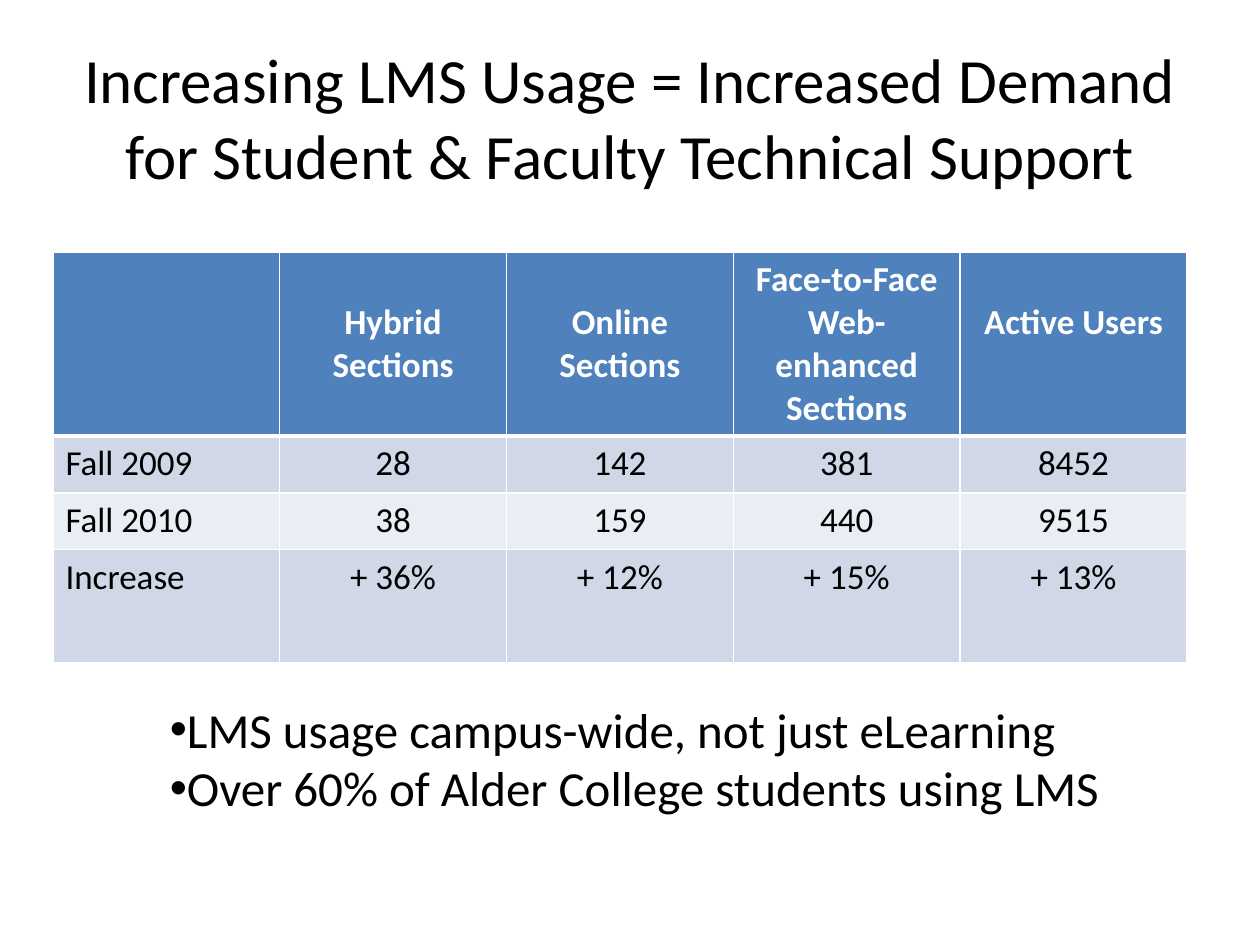
from lxml.etree import SubElement
from pptx import Presentation
from pptx.dml.color import RGBColor
from pptx.enum.text import MSO_ANCHOR, MSO_AUTO_SIZE, PP_ALIGN
from pptx.oxml.ns import qn
from pptx.util import Pt

HEADINGS = ["", "Hybrid Sections", "Online Sections",
            "Face-to-Face\nWeb-enhanced\nSections", "Active Users"]
TERMS = [["Fall 2009", "28", "142", "381", "8452"],
         ["Fall 2010", "38", "159", "440", "9515"],
         ["Increase", "+ 36%", "+ 12%", "+ 15%", "+ 13%"]]
ROW_HEIGHTS = [92, 32.4, 32.4, 64.8]
HEADER_FILL, BAND_FILLS = "4F81BD", ["D0D8E8", "E9EDF4"]
POINTS = ["LMS usage campus-wide, not just eLearning",
          "Over 60% of Alder College students using LMS"]


def colour(value):
    return RGBColor.from_string(value)


def write(frame, text, size, ink="000000", bold=False, align=PP_ALIGN.LEFT):
    """Fill a text frame, one paragraph for each line of text."""
    frame.text = text
    for para in frame.paragraphs:
        para.alignment = align
        for span in para.runs:
            formats = {"name": "Calibri", "size": Pt(size), "bold": bold}
            for name, value in formats.items():
                setattr(span.font, name, value)
            span.font.color.rgb = colour(ink)


def set_borders(cell, bottom):
    """White lines round a cell; they must come before its fill."""
    properties = cell._tc.get_or_add_tcPr()
    for side, width in {"lnL": 1, "lnR": 1, "lnT": 1, "lnB": bottom}.items():
        line = SubElement(properties, qn(f"a:{side}"), w=str(Pt(width)))
        fill = SubElement(line, qn("a:solidFill"))
        SubElement(fill, qn("a:srgbClr"), val="FFFFFF")


def place_title(page, left, top, width, height):
    title = page.shapes.title
    box = {"left": left, "top": top, "width": width, "height": height}
    for name, value in box.items():
        setattr(title, name, Pt(value))
    title.text_frame.vertical_anchor = MSO_ANCHOR.MIDDLE
    write(title.text_frame, "Increasing LMS Usage = Increased Demand "
          "for Student & Faculty Technical Support", 36, align=PP_ALIGN.CENTER)


def place_usage_table(page, left, top, width):
    rows = [HEADINGS] + TERMS
    table = page.shapes.add_table(
        len(rows), len(HEADINGS), Pt(left), Pt(top), Pt(width),
        Pt(sum(ROW_HEIGHTS))).table
    for column in table.columns:
        column.width = Pt(width / len(HEADINGS))
    for r, values in enumerate(rows):
        table.rows[r].height = Pt(ROW_HEIGHTS[r])
        header = r == 0
        for c, text in enumerate(values):
            cell = table.cell(r, c)
            set_borders(cell, 3 if header else 1)
            cell.fill.solid()
            cell.fill.fore_color.rgb = colour(
                HEADER_FILL if header else BAND_FILLS[(r - 1) % 2])
            write(cell.text_frame, text, 20, "FFFFFF" if header else "000000",
                  header, PP_ALIGN.CENTER if c else PP_ALIGN.LEFT)
            # Short headings start one line down
            if header and "\n" not in text:
                cell.margin_top = Pt(28)


def place_points(page, left, top, width, height):
    frame = page.shapes.add_textbox(
        Pt(left), Pt(top), Pt(width), Pt(height)).text_frame
    frame.word_wrap = False
    frame.auto_size = MSO_AUTO_SIZE.SHAPE_TO_FIT_TEXT
    write(frame, "\n".join(POINTS), 28)
    for para in frame.paragraphs:
        properties = para._p.get_or_add_pPr()
        SubElement(properties, qn("a:buFont"), typeface="Arial")
        SubElement(properties, qn("a:buChar"), char="•")


def main():
    deck = Presentation()
    deck.slide_width, deck.slide_height = Pt(720), Pt(540)
    page = deck.slides.add_slide(deck.slide_layouts[5])
    place_title(page, 36, 21.6, 648, 90)
    place_usage_table(page, 30.24, 144, 648)
    place_points(page, 90, 396, 553.68, 74.88)
    deck.save("out.pptx")


if __name__ == "__main__":
    main()
